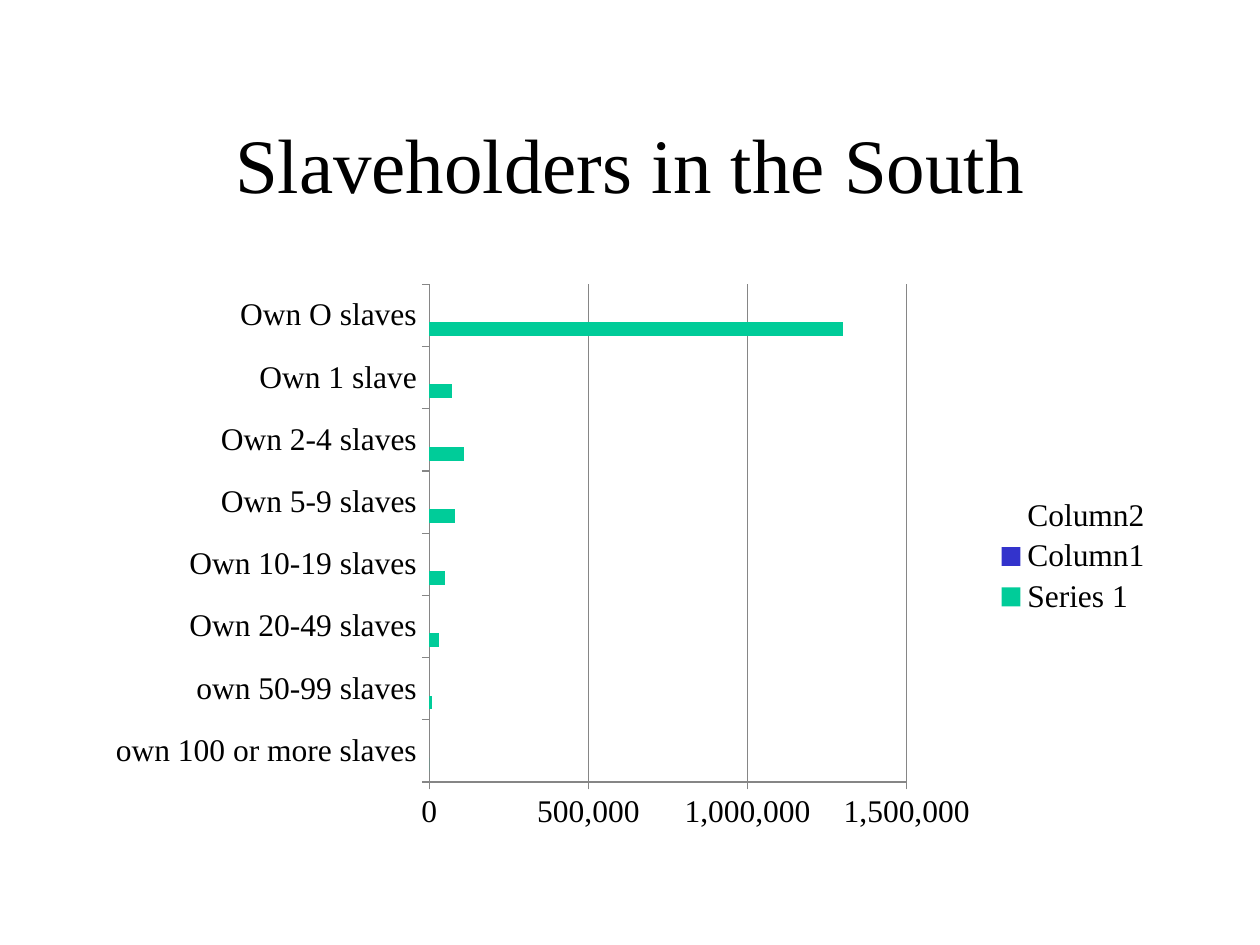
from pptx import Presentation
from pptx.chart.data import CategoryChartData
from pptx.dml.color import RGBColor
from pptx.enum.chart import XL_CHART_TYPE as ChartType, XL_LEGEND_POSITION as LegendPosition
from pptx.enum.chart import XL_TICK_MARK as TickMark
from pptx.enum.text import MSO_ANCHOR as Anchor, PP_ALIGN as Align
from pptx.util import Inches, Pt

BLACK = RGBColor(0x00, 0x00, 0x00)
WHITE = RGBColor(0xFF, 0xFF, 0xFF)
GRAY = RGBColor(0x86, 0x86, 0x86)
GREEN = RGBColor(0x00, 0xCC, 0x99)
BLUE = RGBColor(0x33, 0x33, 0xCC)

# Listed from the bottom of the chart upwards
HOLDERS = {
    "own 100 or more slaves": 0,
    "own 50-99 slaves": 10000,
    "Own 20-49 slaves": 30000,
    "Own 10-19 slaves": 50000,
    "Own 5-9 slaves": 80000,
    "Own 2-4 slaves": 110000,
    "Own 1 slave": 70000,
    "Own O slaves": 1300000,
}
EMPTY = [None] * len(HOLDERS)
SERIES = [
    ("Series 1", list(HOLDERS.values()), GREEN),
    ("Column1", EMPTY, BLUE),
    ("Column2", EMPTY, WHITE),
]


class SlideBuilder:
    """Places elements on a grid of 40 columns and 45 rows."""

    font_name = "Times New Roman"
    columns, rows = 40, 45

    def __init__(self, deck):
        self.deck = deck
        self.slide = deck.slides.add_slide(deck.slide_layouts[6])

    def area(self, column, row, width, height):
        column_size = self.deck.slide_width / self.columns
        row_size = self.deck.slide_height / self.rows
        return (int(column * column_size), int(row * row_size),
                int(width * column_size), int(height * row_size))

    def style_font(self, font, size):
        font.name = self.font_name
        font.size = Pt(size)
        font.color.rgb = BLACK

    def title(self, text, *cells):
        frame = self.slide.shapes.add_textbox(*self.area(*cells)).text_frame
        frame.word_wrap = True
        frame.vertical_anchor = Anchor.MIDDLE
        para = frame.paragraphs[0]
        para.text = text
        para.alignment = Align.CENTER
        self.style_font(para.font, 44)

    def bar_chart(self, categories, series, *cells):
        data = CategoryChartData(number_format="#,##0")
        data.categories = categories
        for name, values, _ in series:
            data.add_series(name, values)
        chart = self.slide.shapes.add_chart(
            ChartType.BAR_CLUSTERED, *self.area(*cells), data).chart
        self.style_font(chart.font, 18)
        chart.has_title = False
        chart.has_legend = True
        chart.legend.position = LegendPosition.RIGHT
        chart.legend.include_in_layout = False

        plot = chart.plots[0]
        plot.gap_width = 150
        plot.overlap = 0
        plot.vary_by_categories = False
        for bars, (_, _, color) in zip(plot.series, series):
            bars.format.fill.solid()
            bars.format.fill.fore_color.rgb = color

        value_axis = chart.value_axis
        value_axis.has_major_gridlines = True
        value_axis.tick_labels.number_format = "#,##0"
        value_axis.tick_labels.number_format_is_linked = False
        for axis in (chart.category_axis, value_axis):
            axis.major_tick_mark = TickMark.OUTSIDE
            self.style_line(axis.format.line)
        self.style_line(value_axis.major_gridlines.format.line)

    def style_line(self, line):
        line.color.rgb = GRAY
        line.width = Pt(0.75)


def main():
    deck = Presentation()
    deck.slide_width, deck.slide_height = Inches(10), Inches(7.5)
    builder = SlideBuilder(deck)
    builder.title("Slaveholders in the South", 3, 4, 34, 7.5)
    builder.bar_chart(list(HOLDERS), SERIES, 3, 13, 34, 27)
    deck.save("out.pptx")


if __name__ == "__main__":
    main()
